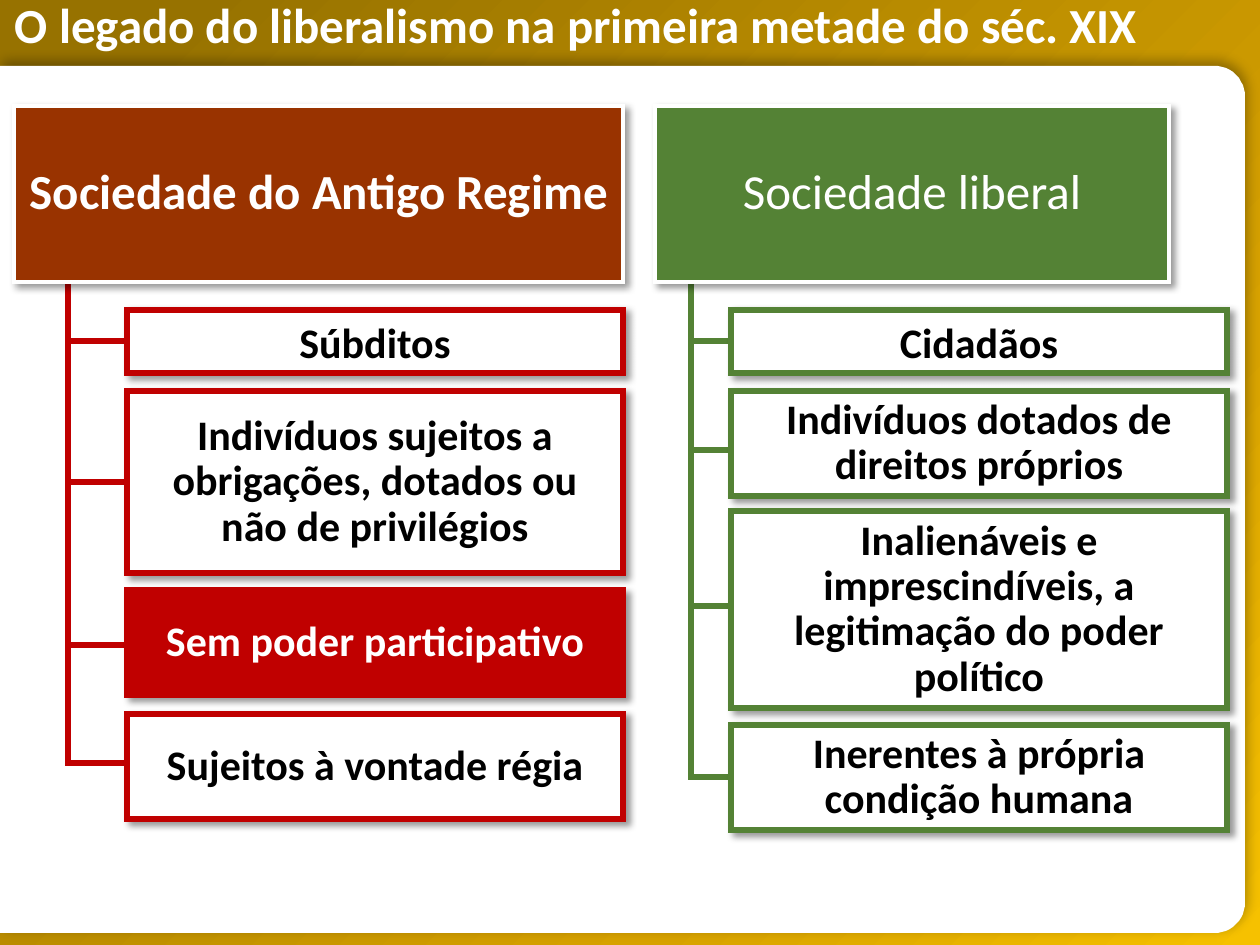
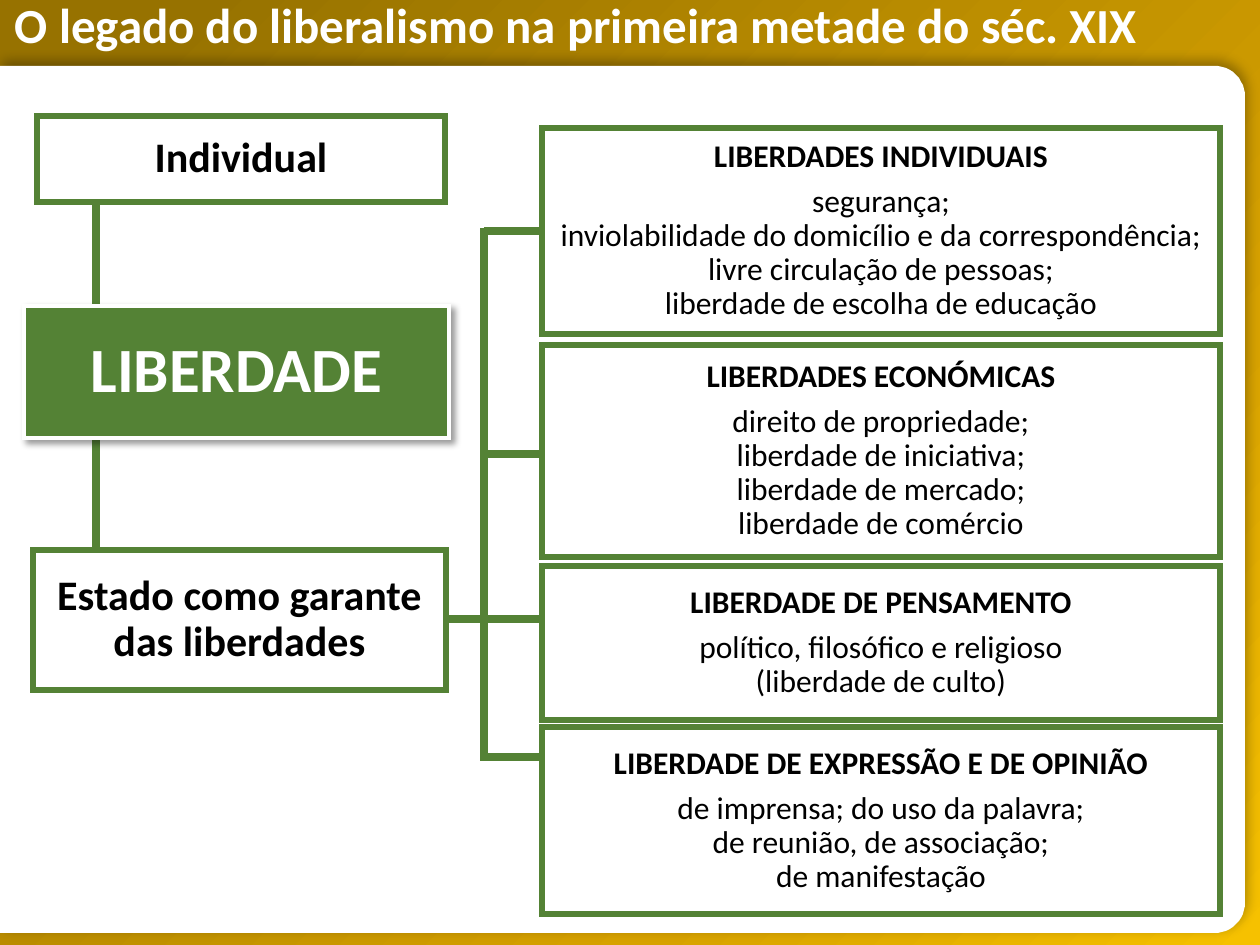
from math import cos, pi, sin

from lxml.etree import SubElement
from pptx import Presentation
from pptx.dml.color import RGBColor as RGB
from pptx.enum.shapes import MSO_CONNECTOR as LINK, MSO_SHAPE as SHAPE
from pptx.enum.text import MSO_ANCHOR as ANCHOR, PP_ALIGN as ALIGN
from pptx.oxml import parse_xml
from pptx.oxml.ns import nsdecls, qn
from pptx.util import Pt

WIDE, HIGH = 1260, 945
SCALE = 914400 / 126
FONT = "Calibri"
TITLE = "O legado do liberalismo na primeira metade do séc. XIX"
COLORS = {
    "white": "FFFFFF", "black": "000000", "green": "548235",
    "red": "C00000", "rust": "993300",
}
GOLD = [(9, "977200"), (72, "D7A200"), (100, "F6C100")]
RISES = (59, 203, 186, 203)  # heights of the four branches of a tree


def px(n):
    return round(n * SCALE)


def color(name):
    return RGB.from_string(COLORS[name])


def write(shape, text, size=24, ink="black", bold=True, align=ALIGN.CENTER,
          anchor=ANCHOR.MIDDLE, pad=(13, 6), lead=0.9, before=0, after=0.35):
    """Text is one paragraph or a list; only the first takes bold."""
    frame = shape.text_frame
    frame.word_wrap = True
    frame.vertical_anchor = anchor
    frame.margin_left = frame.margin_right = px(pad[0])
    frame.margin_top = frame.margin_bottom = px(pad[1])
    for i, part in enumerate([text] if isinstance(text, str) else text):
        para = frame.add_paragraph() if i else frame.paragraphs[0]
        para.text = part
        para.alignment = align
        para.line_spacing = lead
        para.space_before = Pt(size * before)
        para.space_after = Pt(size * after)
        for run in para.runs:
            font = run.font
            font.name, font.size = FONT, Pt(size)
            font.bold = bold and i == 0
            font.color.rgb = color(ink)


def shade(shape, alpha=40, blur=4, dist=3, angle=45):
    effects = shape._element.spPr.find(qn("a:effectLst"))
    outer = SubElement(effects, qn("a:outerShdw"), blurRad=str(Pt(blur)),
                       dist=str(Pt(dist)), dir=str(angle * 60000),
                       algn="ctr", rotWithShape="0")
    ink = SubElement(outer, qn("a:srgbClr"), val=COLORS["black"])
    SubElement(ink, qn("a:alpha"), val=str(alpha * 1000))


def stroke(shape, ink, width):
    """Solid line with sharp corners."""
    shape.line.color.rgb = color(ink)
    shape.line.width = Pt(width)
    line = shape._element.spPr.find(qn("a:ln"))
    SubElement(line, qn("a:miter"), lim="800000")


def block(slide, box, text, fill="white", edge="green", width=3,
          shadow=True, **style):
    shape = slide.shapes.add_shape(SHAPE.RECTANGLE, *map(px, box))
    shape.shadow.inherit = False
    shape.fill.solid()
    shape.fill.fore_color.rgb = color(fill)
    stroke(shape, edge, width)
    if shadow:
        shade(shape)
    write(shape, text, **style)


def header(slide, box, text, fill, **style):
    block(slide, box, text, fill=fill, edge="white", width=2.25,
          ink="white", pad=(10, 9), **style)


def link(slide, start, end, ink="green", width=4.5, kind=LINK.STRAIGHT):
    line = slide.shapes.add_connector(kind, *map(px, start + end))
    stroke(line, ink, width)
    SubElement(line._element.spPr, qn("a:effectLst"))
    return line


def elbow(slide, start, end, ink):
    """One-bend connector that goes down, then right."""
    (x, y), (right, low) = start, end
    run, rise = right - x, low - y
    left, top = x + (run - rise) / 2, y + (rise - run) / 2
    line = link(slide, (left, top), (left + rise, top + run), ink,
                width=3, kind=LINK.ELBOW)
    props = line._element.spPr
    props.find(qn("a:prstGeom")).set("prst", "bentConnector2")
    turn = props.find(qn("a:xfrm"))
    turn.set("rot", str(270 * 60000))
    turn.set("flipH", "1")


def base(deck):
    """New slide with gold ground, title and white panel."""
    slide = deck.slides.add_slide(deck.slide_layouts[6])
    ground = slide.shapes.add_shape(SHAPE.RECTANGLE, 0, 0, px(WIDE), px(HIGH))
    ground.shadow.inherit = False
    ground.line.fill.background()
    stops = "".join(f'<a:gs pos="{at * 1000}"><a:srgbClr val="{tone}"/></a:gs>'
                    for at, tone in GOLD)
    props = ground._element.spPr
    props.find(qn("a:prstGeom")).addnext(parse_xml(
        f'<a:gradFill {nsdecls("a")}><a:gsLst>{stops}</a:gsLst>'
        '<a:lin ang="2700000" scaled="0"/></a:gradFill>'))

    title = slide.shapes.add_textbox(*map(px, (2, 19, 1210, 47)))
    write(title, TITLE, size=28, ink="white", align=ALIGN.LEFT,
          anchor=ANCHOR.TOP, lead=Pt(16), after=0)
    panel(slide, (0, 66, 1245, 867))
    return slide


def panel(slide, box, curve=31, steps=12):
    """White sheet with its two right corners rounded."""
    x, y, w, h = box
    turns = [i * pi / 2 / steps for i in range(steps + 1)]
    hub = x + w - curve
    top = [(hub + curve * sin(t), y + curve - curve * cos(t)) for t in turns]
    low = [(across, 2 * y + h - down) for across, down in reversed(top)]
    path = slide.shapes.build_freeform(x, y, scale=SCALE)
    path.add_line_segments(top + low + [(x, y + h)], close=True)
    sheet = path.convert_to_shape()
    sheet.shadow.inherit = False
    sheet.fill.solid()
    sheet.fill.fore_color.rgb = color("white")
    sheet.line.fill.background()
    shade(sheet, alpha=30, blur=7, angle=315)


def tree(slide, box, head, items, stem, left, edge, fill, bold=True):
    """Header with stem and branches; offsets count from the box."""
    x, y, w, h = box
    for (text, drop, tall, branch, *full), rise in zip(items, RISES):
        elbow(slide, (x + stem, y + branch - rise),
              (x + left, y + branch), edge)
    for i, (text, drop, tall, branch, *full) in enumerate(items):
        style = dict(fill=edge, ink="white") if full else {}
        if i == 0:
            style.update(lead=1, before=0.2, after=0)
        block(slide, (x + left, y + drop, 496, tall), text,
              edge=edge, **style)
    header(slide, box, head, fill, size=28, bold=bold)


def compare(deck):
    slide = base(deck)
    # Right tree: liberal society
    tree(slide, (655, 106, 514, 176), "Sociedade liberal", [
        ("Cidadãos", 204, 63, 235),
        ("Indivíduos dotados de direitos próprios", 285, 105, 344),
        ("Inalienáveis e imprescindíveis, a legitimação do poder político",
         405, 197, 500),
        ("Inerentes à própria condição humana", 619, 105, 671),
    ], stem=36, left=76, edge="green", fill="green", bold=False)
    # Left tree: old regime
    tree(slide, (14, 106, 609, 176), "Sociedade do Antigo Regime", [
        ("Súbditos", 204, 63, 235),
        ("Indivíduos sujeitos a obrigações, dotados ou não de privilégios",
         285, 182, 376),
        ("Sem poder participativo", 484, 105, 539, True),
        ("Sujeitos à vontade régia", 608, 105, 657),
    ], stem=54, left=113, edge="red", fill="rust")


def pillar(slide, box):
    """Left column: freedom between the person and the state."""
    x, y, w, h = box
    flat = dict(shadow=False, pad=(1, 1))
    link(slide, (x + 72, y + 68), (x + 72, y + 450))
    block(slide, (x + 13, y, 408, 86), "Individual", **flat)
    block(slide, (x + 9, y + 434, 413, 140),
          "Estado como garante das liberdades", **flat)
    header(slide, (x, y + 190, w, 132), "LIBERDADE", "green", size=36)


def rights(slide, box, items, stem):
    """Right column of freedoms on a stem; offsets count from the box."""
    x, y, w, h = box
    for text, drop, tall, branch in items:
        link(slide, (x + stem, y + branch), (x + 14, y + branch))
        block(slide, (x, y + drop, w, tall), text, size=18,
              shadow=False, pad=(1, 1))
    for start, end in ((100, 493), (493, 633)):
        link(slide, (x + stem, y + start), (x + stem, y + end))


def freedom(deck):
    slide = base(deck)
    # Bridge from the state to the freedoms
    link(slide, (437, 619), (484, 619))
    pillar(slide, (24, 116, 425, 574))
    rights(slide, (542, 128, 678, 786), [
        (["LIBERDADES INDIVIDUAIS",
          "segurança;\vinviolabilidade do domicílio e da correspondência;\v"
          "livre circulação de pessoas;\vliberdade de escolha de educação"],
         0, 206, 103),
        (["LIBERDADES ECONÓMICAS",
          "direito de propriedade;\vliberdade de iniciativa;\v"
          "liberdade de mercado;\vliberdade de comércio"],
         217, 212, 326),
        (["LIBERDADE DE PENSAMENTO",
          "político, filosófico e religioso\v(liberdade de culto)"],
         438, 154, 491),
        (["LIBERDADE DE EXPRESSÃO E DE OPINIÃO",
          "de imprensa; do uso da palavra;\vde reunião, de associação;\v"
          "de manifestação"],
         599, 187, 629),
    ], stem=-58)


def main():
    deck = Presentation()
    deck.slide_width, deck.slide_height = px(WIDE), px(HIGH)
    compare(deck)
    freedom(deck)
    deck.save("out.pptx")


if __name__ == "__main__":
    main()
